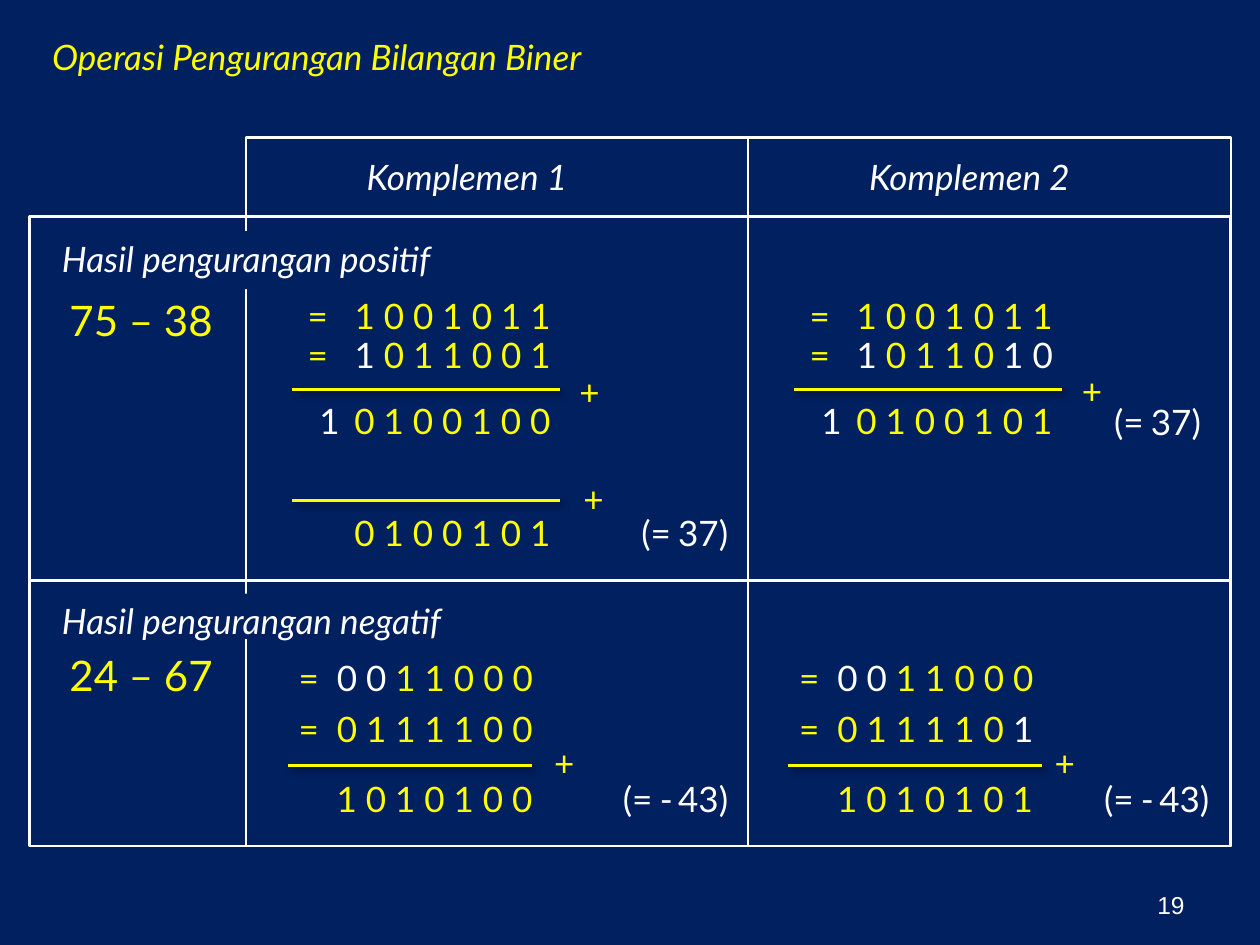
from pptx import Presentation
from pptx.dml.color import RGBColor as Rgb
from pptx.enum.shapes import MSO_CONNECTOR as Conn, MSO_SHAPE as Kind
from pptx.enum.text import MSO_ANCHOR as Anchor, PP_ALIGN as Align
from pptx.oxml import parse_xml
from pptx.util import Cm, Pt

NAVY, GOLD, WHITE = "002060", "FFFF00", "FFFFFF"
NS = "http://schemas.openxmlformats.org/drawingml/2006/main"
SHADE = (f'<a:effectLst xmlns:a="{NS}"><a:outerShdw blurRad="50800" dist="38100" '
         'dir="2700000"><a:srgbClr val="000000"><a:alpha val="53000"/>'
         '</a:srgbClr></a:outerShdw></a:effectLst>')
DIGITS, SLACK = 3.95, 0.3

COLS = [("Komplemen 2", 15.08, 9.74, 17.27), ("Komplemen 1", 4.96, 10.12, 7.14)]
TOP, FOOT = 2.77, 17.06
ROWS = [("Hasil pengurangan positif", 4.37, 7.34, 4.66, 8.48, 1.17),
        ("Hasil pengurangan negatif", 11.71, 5.35, 11.97, 9.12, 0.91)]
TASKS = [("75 – 38", 5.94), ("24 – 67", 13.1)]

THREE = [("(=", 20), (" ", 16), ("37)", 20)]
MINUS = [("(=", 20), (" ", 16), ("-", 20), (" ", 12), ("43)", 20)]

SUMS = [
    dict(x=5.16, wide=5.94, hang=0.95, carry=6.15,
         lines=[(5.94, "=\t1 0 0 1 0 1 1"), (6.73, "=\t|1| 0 1 1 0 0 1"),
                (8.05, "0 1 0 0 1 0 0"), (10.31, "0 1 0 0 1 0 1")],
         rules=[(5.89, 11.28, 7.85), (5.89, 11.28, 10.09)],
         plus=[(11.43, 7.34), (11.51, 9.5)],
         result=(THREE, 14.68, 10.31)),
    dict(x=15.28, wide=5.94, hang=0.95, carry=16.27,
         lines=[(5.94, "=\t1 0 0 1 0 1 1"), (6.73, "=\t|1| 0 1 1 0 |1 0"),
                (8.05, "0 1 0 0 1 0 1")],
         rules=[(16.01, 21.41, 7.85)], plus=[(21.56, 7.32)],
         result=(THREE, 24.21, 8.08)),
    dict(x=5.38, wide=5.36, hang=0.77, carry=None,
         lines=[(13.23, "=\t|0 0| 1 1 0 0 0"), (14.27, "=\t0 1 1 1 1 0 0"),
                (15.67, "1 0 1 0 1 0 0")],
         rules=[(5.81, 10.72, 15.43)], plus=[(10.92, 14.83)],
         result=(MINUS, 14.68, 15.67)),
    dict(x=15.47, wide=5.36, hang=0.77, carry=None,
         lines=[(13.23, "=\t|0 0| 1 1 0 0 0"), (14.27, "=\t0 1 1 1 1 0 |1"),
                (15.67, "1 0 1 0 1 0 1")],
         rules=[(15.88, 21.01, 15.43)], plus=[(21.01, 14.83)],
         result=(MINUS, 24.38, 15.67)),
]


def rgb(code):
    return Rgb.from_string(code)


def write(slide, text, x, y, w, h, hue=GOLD, size=20, face="Lato",
          slant=False, align=Align.LEFT, pad=False):
    box = slide.shapes.add_textbox(Cm(x), Cm(y), Cm(w), Cm(h))
    frame = box.text_frame
    frame.word_wrap = True
    if not pad:
        frame.margin_left = frame.margin_right = 0
        frame.margin_top = frame.margin_bottom = 0
    para = frame.paragraphs[0]
    para.alignment = align
    font = para.font
    font.name, font.size, font.italic = face, Pt(size), slant
    font.color.rgb = rgb(hue)
    if isinstance(text, list):
        for part, pts in text:
            run = para.add_run()
            run.text, run.font.size = part, Pt(pts)
    else:
        for i, part in enumerate(text.split("|")):
            run = para.add_run()
            run.text = part
            if i % 2:
                run.font.color.rgb = rgb(WHITE)
    return box


def frame_box(slide, x, y, w, h):
    box = slide.shapes.add_shape(Kind.RECTANGLE, Cm(x), Cm(y), Cm(w), Cm(h))
    box.shadow.inherit = False
    box.fill.background()
    box.line.color.rgb = rgb(WHITE)
    box.line.width = Pt(1.5)


def rule(slide, left, right, y):
    line = slide.shapes.add_connector(
        Conn.STRAIGHT, Cm(left), Cm(y), Cm(right), Cm(y))
    line.line.color.rgb = rgb(GOLD)
    line.line.width = Pt(1.5)
    line._element.spPr.append(parse_xml(SHADE))


def draw_sum(slide, x, wide, hang, carry, lines, rules, plus, result):
    for y, text in lines:
        if "\t" in text:
            box = write(slide, text, x, y, wide + SLACK, 1.19)
            props = box.text_frame.paragraphs[0]._p.get_or_add_pPr()
            props.set("marL", str(Cm(wide - DIGITS)))
            props.set("indent", str(-Cm(hang)))
        else:
            write(slide, text, x, y, wide, 1.19, align=Align.RIGHT)
    for span in rules:
        rule(slide, *span)
    for left, y in plus:
        write(slide, "+", left, y, 1.04, 1.12, pad=True)
    text, right, y = result
    write(slide, text, right - 2.41, y, 2.41, 0.86, WHITE, align=Align.RIGHT)
    if carry:
        write(slide, "1", carry, 8.05, 0.99, 0.86, WHITE, align=Align.CENTER)


def main():
    """Build the slide on binary subtraction by complements."""
    deck = Presentation()
    deck.slide_width, deck.slide_height = Cm(25.4), Cm(19.05)
    slide = deck.slides.add_slide(deck.slide_layouts[6])
    slide.background.fill.solid()
    slide.background.fill.fore_color.rgb = rgb(NAVY)

    for name, x, w, left in COLS:
        frame_box(slide, x, TOP, w, FOOT - TOP)
        write(slide, name, left, 3.02, 5.2, 1.12, WHITE, slant=True, pad=True)
    for name, y, h, top, w, tall in ROWS:
        frame_box(slide, 0.6, y, 24.21, h)
        label = write(slide, name, 1, top, w, tall, WHITE, slant=True, pad=True)
        label.fill.solid()
        label.fill.fore_color.rgb = rgb(NAVY)

    write(slide, "Operasi Pengurangan Bilangan Biner", 0.8, 0.59, 22.63, 1.12,
          slant=True, pad=True)
    for text, y in TASKS:
        write(slide, text, 1.4, y, 3.15, 1.02, size=24)
    for item in SUMS:
        draw_sum(slide, **item)
    page = write(slide, "19", 18.21, 17.35, 5.92, 1.32, WHITE, 14, "Arial",
                 align=Align.RIGHT, pad=True)
    page.text_frame.vertical_anchor = Anchor.BOTTOM
    deck.save("out.pptx")


if __name__ == "__main__":
    main()
